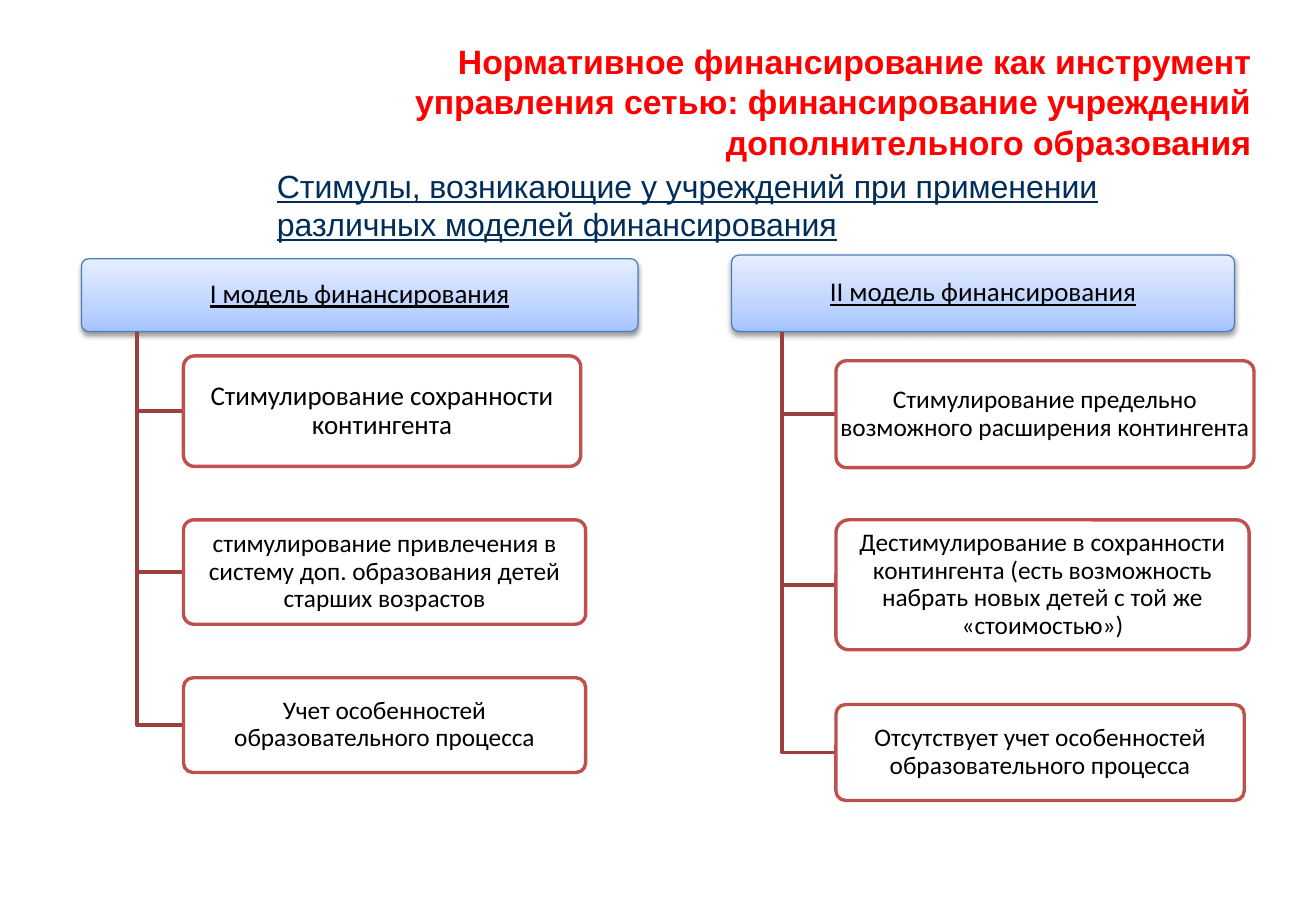
from copy import deepcopy

from pptx import Presentation
from pptx.dml.color import RGBColor
from pptx.enum.shapes import MSO_SHAPE
from pptx.enum.text import MSO_ANCHOR, PP_ALIGN
from pptx.oxml import parse_xml
from pptx.oxml.ns import nsdecls, qn
from pptx.util import Inches, Pt

COLORS = {
    "title": "FF0000", "subtitle": "002D59", "text": "000000",
    "header_line": "4B7EBC", "card": "FFFFFF", "card_line": "C0504D",
    "branch": "9A403E",
}
HEADER_STOPS = [(0, "A4C4FF"), (0.35, "BFD4FF"), (1, "E6EEFF")]
HEADER_BOTTOM = 2.73

# Each model: header (left, top, width), card left, cards (top, width, height, size, text)
MODELS = [
    ("I модель финансирования", (0.67, 2.13, 4.58), 1.51, [
        (2.93, 3.27, 0.91, 16, "Стимулирование сохранности контингента"),
        (4.28, 3.31, 0.86, 15, "стимулирование привлечения в систему доп. образования детей старших возрастов"),
        (5.58, 3.31, 0.78, 15, "Учет особенностей образовательного процесса"),
    ]),
    ("II модель финансирования", (6.02, 2.1, 4.14), 6.88, [
        (2.97, 3.44, 0.88, 15, "Стимулирование предельно возможного расширения контингента"),
        (4.28, 3.4, 1.07, 15, "Дестимулирование в сохранности контингента (есть возможность набрать новых детей с той же «стоимостью»)"),
        (5.8, 3.36, 0.79, 15, "Отсутствует учет особенностей образовательного процесса"),
    ]),
]


def add_run(p, text, size, color, font):
    r = p.add_run()
    r.text = text
    r.font.size = Pt(size)
    r.font.name = font
    r.font.color.rgb = RGBColor.from_string(COLORS[color])
    return r


def add_box(left, top, width, height, text, size, line, line_width):
    """Add a rounded box with centred text; return the shape and its run."""
    sp = s.shapes.add_shape(MSO_SHAPE.ROUNDED_RECTANGLE, Inches(left), Inches(top),
                            Inches(width), Inches(height))
    sp.adjustments[0] = 0.1
    sp.shadow.inherit = False
    sp.line.color.rgb = RGBColor.from_string(COLORS[line])
    sp.line.width = Pt(line_width)
    tf = sp.text_frame
    tf.word_wrap = True
    tf.vertical_anchor = MSO_ANCHOR.MIDDLE
    tf.margin_left = tf.margin_right = tf.margin_top = tf.margin_bottom = 0
    p = tf.paragraphs[0]
    p.alignment = PP_ALIGN.CENTER
    p.line_spacing = 0.9
    return sp, add_run(p, text, size, "text", "Calibri")


prs = Presentation()
prs.slide_width, prs.slide_height = Inches(10.83), Inches(7.5)
s = prs.slides.add_slide(prs.slide_layouts[5])

title = s.shapes.title
title.left, title.top = Inches(2.11), Inches(0.35)
title.width, title.height = Inches(8.29), Inches(0.97)
tf = title.text_frame
tf.word_wrap = True
tf.vertical_anchor = MSO_ANCHOR.MIDDLE
p = tf.paragraphs[0]
p.alignment = PP_ALIGN.RIGHT
r = add_run(p, "Нормативное финансирование как инструмент управления сетью: "
            "финансирование учреждений дополнительного образования", 20, "title", "Arial")
r.font.bold = True

for name, (left, top, width), card_left, cards in MODELS:
    header, r = add_box(left, top, width, HEADER_BOTTOM - top, name, 16, "header_line", 0.75)
    r.font.underline = True
    header.fill.gradient()
    header.fill.gradient_angle = 90
    stops = header.fill.gradient_stops
    first = header._element.spPr.find(".//" + qn("a:gs"))
    first.addnext(deepcopy(first))
    for stop, (position, color) in zip(header.fill.gradient_stops, HEADER_STOPS):
        stop.position = position
        stop.color.rgb = RGBColor.from_string(color)
    header._element.spPr.find(qn("a:effectLst")).append(parse_xml(
        f'<a:outerShdw {nsdecls("a")} blurRad="{Pt(3.1)}" dist="{Pt(1.6)}" dir="5400000" '
        'rotWithShape="0"><a:srgbClr val="000000"><a:alpha val="38000"/></a:srgbClr></a:outerShdw>'))

    trunk = left + width / 10
    for card_top, card_width, height, size, text in cards:
        middle = card_top + height / 2
        path = s.shapes.build_freeform(Inches(trunk), Inches(HEADER_BOTTOM))
        path.add_line_segments([(Inches(trunk), Inches(middle)),
                                (Inches(card_left), Inches(middle))], close=False)
        branch = path.convert_to_shape()
        branch.shadow.inherit = False
        branch.fill.background()
        branch.line.color.rgb = RGBColor.from_string(COLORS["branch"])
        branch.line.width = Pt(2)

        card, r = add_box(card_left, card_top, card_width, height, text, size, "card_line", 2)
        card.fill.solid()
        card.fill.fore_color.rgb = RGBColor.from_string(COLORS["card"])
        alpha = parse_xml(f'<a:alpha {nsdecls("a")} val="90000"/>')
        card._element.spPr.find(qn("a:solidFill"))[0].append(alpha)

subtitle = s.shapes.add_textbox(Inches(2.18), Inches(1.32), Inches(7.59), Inches(0.74))
tf = subtitle.text_frame
tf.word_wrap = True
r = add_run(tf.paragraphs[0], "Стимулы, возникающие у учреждений при применении "
            "различных моделей финансирования", 19, "subtitle", "Arial")
r.font.underline = True

prs.save("out.pptx")
